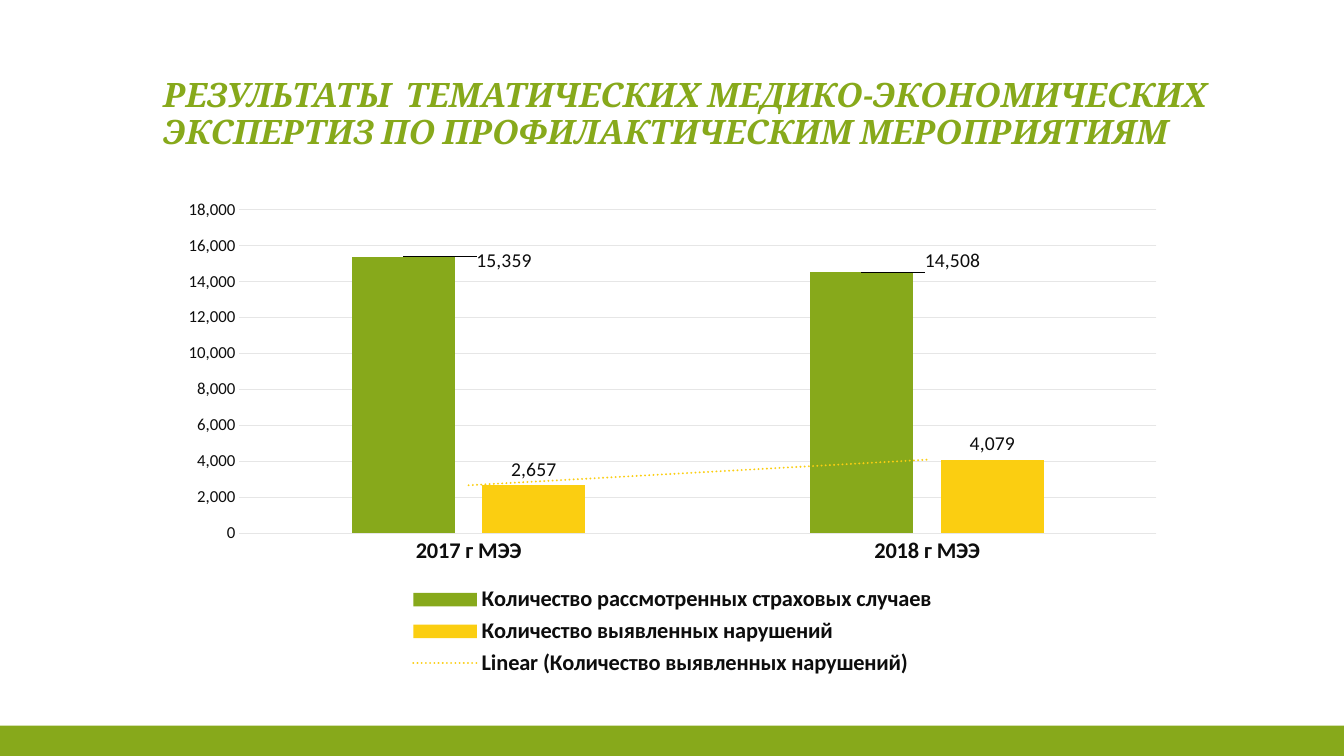
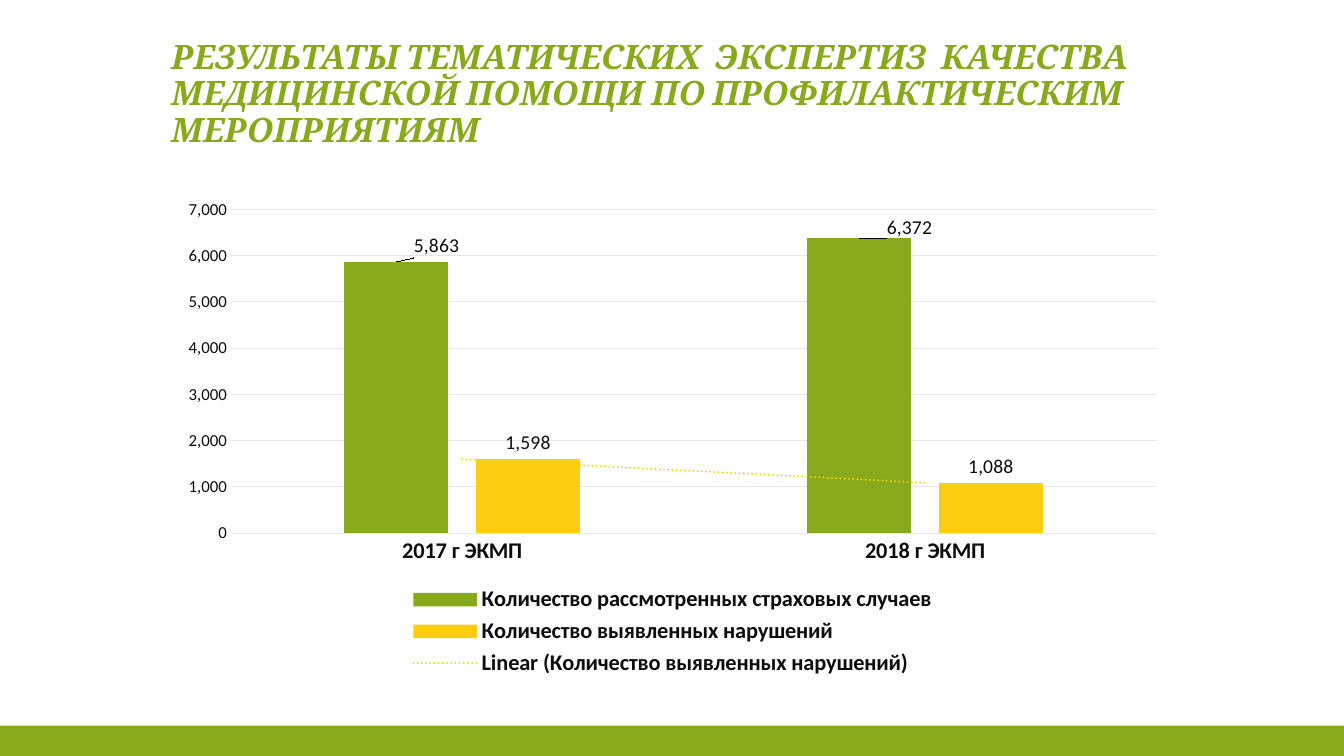
import pptx
import pptx.util
import pptx.chart.data
import pptx.dml.color
import pptx.enum.chart
import pptx.enum.shapes
import pptx.enum.text
import pptx.oxml
import pptx.oxml.ns

Inches, Pt = pptx.util.Inches, pptx.util.Pt
XL = pptx.enum.chart

GREEN, YELLOW, INK, GRID, GREY = "87A91B", "FBCE11", "0D0D0D", "E6E6E6", "595959"
SLIDE_W, SLIDE_H, BAND_H = 13.33, 7.5, 0.3
CHART_BOX = (1.67, 1.88, 10, 4.88)
NUMBER = "#,##0"

TITLE_FONT = dict(name="Cambria", size=Pt(24), bold=True, italic=True)
BASE_FONT = dict(name="Calibri", size=Pt(10))
VALUE_FONT = dict(name="Calibri", size=Pt(12), bold=False)
LABEL_FONT = dict(name="Calibri", size=Pt(14), bold=False)
STRONG_FONT = dict(name="Calibri", size=Pt(16), bold=True)

SERIES = [("Количество рассмотренных страховых случаев", GREEN),
          ("Количество выявленных нарушений", YELLOW)]

# label_shifts: offsets of the first series' labels, as fractions of the chart
SLIDES = [
    dict(title="РЕЗУЛЬТАТЫ  ТЕМАТИЧЕСКИХ МЕДИКО-ЭКОНОМИЧЕСКИХ "
               "ЭКСПЕРТИЗ ПО ПРОФИЛАКТИЧЕСКИМ МЕРОПРИЯТИЯМ",
         title_box=(1.52, 0.24, 11.22, 1.31),
         cats=["2017 г МЭЭ", "2018 г МЭЭ"],
         values=[(15359, 14508), (2657, 4079)],
         label_shifts=[(0.1, 0.04), (0.09, 0.01)]),
    dict(title="РЕЗУЛЬТАТЫ ТЕМАТИЧЕСКИХ  ЭКСПЕРТИЗ  КАЧЕСТВА "
               "МЕДИЦИНСКОЙ ПОМОЩИ ПО ПРОФИЛАКТИЧЕСКИМ МЕРОПРИЯТИЯМ",
         title_box=(1.6, 0.28, 10.98, 1.25),
         cats=["2017 г ЭКМП", "2018 г ЭКМП"],
         values=[(5863, 6372), (1598, 1088)],
         label_shifts=[(0.04, 0), (0.05, 0.01)]),
]


def rgb(value):
    return pptx.dml.color.RGBColor.from_string(value)


def box(values):
    return [Inches(v) for v in values]


def set_attrs(obj, **attrs):
    for name, value in attrs.items():
        setattr(obj, name, value)


def set_font(font, color, attrs):
    set_attrs(font, **attrs)
    font.color.rgb = rgb(color)


def set_line(line, color):
    line.color.rgb = rgb(color)
    line.width = Pt(0.75)


def chart_xml(body):
    return pptx.oxml.parse_xml(body.replace(">", " %s>" % pptx.oxml.ns.nsdecls("c", "a"), 1))


def add_band(s):
    band = s.shapes.add_shape(pptx.enum.shapes.MSO_SHAPE.RECTANGLE,
                              *box((0, SLIDE_H - BAND_H, SLIDE_W, BAND_H)))
    band.shadow.inherit = False
    band.fill.solid()
    band.fill.fore_color.rgb = rgb(GREEN)
    band.line.fill.background()


def add_title(s, at, text):
    tf = s.shapes.add_textbox(*box(at)).text_frame
    set_attrs(tf, word_wrap=True, vertical_anchor=pptx.enum.text.MSO_ANCHOR.BOTTOM)
    p = tf.paragraphs[0]
    p.line_spacing = 0.9
    r = p.add_run()
    r.text = text
    set_font(r.font, GREEN, TITLE_FONT)


def style_axes(chart):
    for axis, font in ((chart.category_axis, STRONG_FONT), (chart.value_axis, VALUE_FONT)):
        set_attrs(axis, major_tick_mark=XL.XL_TICK_MARK.NONE,
                  minor_tick_mark=XL.XL_TICK_MARK.NONE)
        set_font(axis.tick_labels.font, INK, font)
    set_line(chart.category_axis.format.line, GRID)
    axis = chart.value_axis
    axis.format.line.fill.background()
    set_line(axis.major_gridlines.format.line, GRID)
    set_attrs(axis.tick_labels, number_format=NUMBER, number_format_is_linked=False)


def style_series(series, color):
    series.format.fill.solid()
    series.format.fill.fore_color.rgb = rgb(color)
    labels = series.data_labels
    set_attrs(labels, show_value=True, number_format=NUMBER, number_format_is_linked=False,
              position=XL.XL_LABEL_POSITION.OUTSIDE_END)
    set_font(labels.font, INK, LABEL_FONT)


def shift_labels(series, shifts):
    """Move each point's label by (x, y) fractions of the chart."""
    for i, (x, y) in enumerate(shifts):
        label = series.points[i].data_label
        set_font(label.font, INK, LABEL_FONT)
        label.position = XL.XL_LABEL_POSITION.OUTSIDE_END
        item = series.data_labels._element.xpath('c:dLbl[c:idx/@val="%d"]' % i)[0]
        item.insert(1, chart_xml(
            '<c:layout><c:manualLayout><c:x val="%s"/><c:y val="%s"/>'
            '</c:manualLayout></c:layout>' % (x, y)))


def add_trend(series, color):
    trend = chart_xml(
        '<c:trendline><c:spPr><a:ln w="19050" cap="rnd"><a:solidFill>'
        '<a:srgbClr val="%s"/></a:solidFill><a:prstDash val="sysDot"/></a:ln></c:spPr>'
        '<c:trendlineType val="linear"/><c:dispRSqr val="0"/><c:dispEq val="0"/>'
        '</c:trendline>' % color)
    series._element.xpath("c:cat")[0].addprevious(trend)


def add_results_chart(s, at, cats, values, label_shifts):
    data = pptx.chart.data.CategoryChartData(number_format=NUMBER)
    data.categories = cats
    for (name, _), vals in zip(SERIES, values):
        data.add_series(name, vals)
    chart = s.shapes.add_chart(XL.XL_CHART_TYPE.COLUMN_CLUSTERED, *box(at), data).chart
    set_font(chart.font, GREY, BASE_FONT)
    set_attrs(chart, has_title=False, has_legend=True)
    set_attrs(chart.legend, position=XL.XL_LEGEND_POSITION.BOTTOM, include_in_layout=False)
    set_font(chart.legend.font, INK, STRONG_FONT)
    style_axes(chart)
    plot = chart.plots[0]
    set_attrs(plot, gap_width=219, overlap=-27, vary_by_categories=False)
    cases, violations = plot.series
    for series, (_, color) in zip((cases, violations), SERIES):
        style_series(series, color)
    shift_labels(cases, label_shifts)
    add_trend(violations, YELLOW)


def add_results_slide(prs, title, title_box, **chart):
    s = prs.slides.add_slide(prs.slide_layouts[6])
    add_band(s)
    add_title(s, title_box, title)
    add_results_chart(s, CHART_BOX, **chart)


def main():
    prs = pptx.Presentation()
    set_attrs(prs, slide_width=Inches(SLIDE_W), slide_height=Inches(SLIDE_H))
    for content in SLIDES:
        add_results_slide(prs, **content)
    prs.save("out.pptx")


if __name__ == "__main__":
    main()
